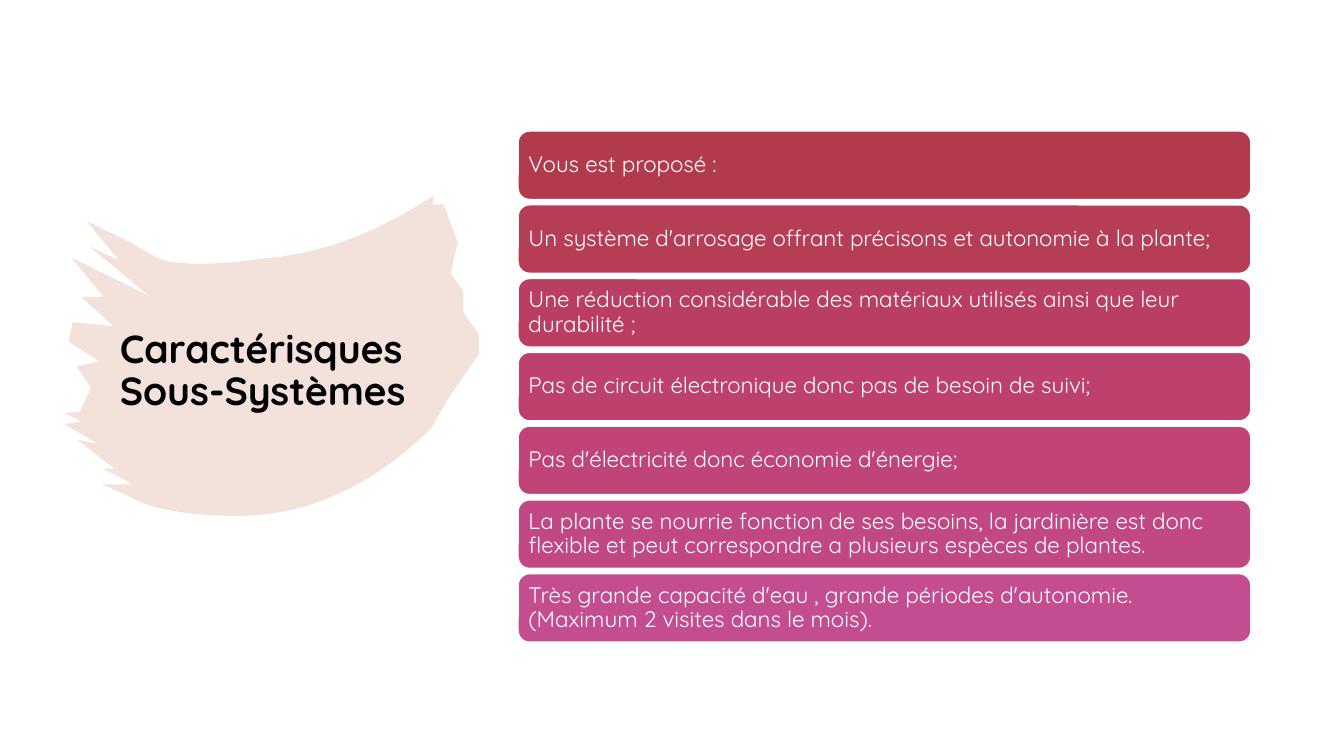
import pptx
import pptx.util
import pptx.dml.color
import pptx.enum.shapes
import pptx.enum.text
from dataclasses import dataclass
from lxml import etree

Pt = pptx.util.Pt


@dataclass(frozen=True)
class Theme:
    font: str = "Quicksand"
    dark: str = "000000"
    light: str = "FFFFFF"
    brush: str = "C36D4D"
    bars: tuple = ("B13B4C", "B53D56", "BA3E61", "BE406C",
                   "C04478", "C24884", "C34D8F")
    head: float = 28
    body: float = 16


THEME = Theme()

LINES = (
    "Vous est proposé :",
    "Un système d'arrosage offrant précisons et autonomie à la plante;",
    "Une réduction considérable des matériaux utilisés ainsi que leur durabilité ;",
    "Pas de circuit électronique donc pas de besoin de suivi;",
    "Pas d'électricité donc économie d'énergie;",
    "La plante se nourrie fonction de ses besoins, la jardinière est donc "
    "flexible et peut correspondre a plusieurs espèces de plantes.",
    "Très grande capacité d'eau , grande périodes d'autonomie.\v"
    "(Maximum 2 visites dans le mois).",
)

# Brush outline in points: pairs are corners, sixes are Bézier curves
EDGE = (
    # right side, downward
    (310, 140), (309, 146), (317, 146), (327, 173), (322, 195),
    (326, 201), (331, 208), (331, 223), (342, 239), (342, 253),
    (320, 285), (308, 306),
    # lower sweep
    (307, 306, 257, 363, 184, 368), (150, 370, 110, 366, 91, 354),
    # bristles, upward
    (73, 346), (95, 346), (74, 335), (82, 335), (55, 314), (70, 317),
    (46, 303), (58, 301), (46, 295), (57, 294), (65, 277), (55, 262),
    (71, 258), (49, 244), (52, 230), (81, 233), (58, 212), (74, 212),
    (51, 184), (106, 211), (64, 176), (85, 186), (62, 158), (91, 172),
    # upper sweep
    (112, 184), (119, 188, 145, 191, 185, 185),
    (239, 181, 274, 160, 288, 153),
)


def tint(code):
    return pptx.dml.color.RGBColor.from_string(code)


def write(shape, text, size, color, bold=False, inset=7.2):
    """Put left-aligned, middle-anchored text in a shape."""
    frame = shape.text_frame
    frame.word_wrap = True
    frame.vertical_anchor = pptx.enum.text.MSO_ANCHOR.MIDDLE
    frame.margin_left = frame.margin_right = Pt(inset)
    frame.margin_top = frame.margin_bottom = Pt(min(inset, 5))
    para = frame.paragraphs[0]
    para.text = text
    para.alignment = pptx.enum.text.PP_ALIGN.LEFT
    para.line_spacing = 0.9
    for run in para.runs:
        run.font.name = THEME.font
        run.font.size = Pt(size)
        run.font.bold = bold
        run.font.color.rgb = tint(color)


def trace(edge, steps=12):
    """Turn corners and Bézier curves into a list of points."""
    spots = [edge[0]]
    for part in edge[1:]:
        if len(part) == 2:
            spots.append(part)
            continue
        ends = (spots[-1], part[:2], part[2:4], part[4:])
        for step in range(1, steps + 1):
            t = step / steps
            mix = ((1 - t) ** 3, 3 * t * (1 - t) ** 2,
                   3 * t * t * (1 - t), t ** 3)
            spots.append(tuple(sum(m * e[axis] for m, e in zip(mix, ends))
                               for axis in (0, 1)))
    return [(Pt(x), Pt(y)) for x, y in spots]


def add_brush(slide):
    spots = trace(EDGE)
    pen = slide.shapes.build_freeform(*spots[0])
    pen.add_line_segments(spots[1:], close=True)
    brush = pen.convert_to_shape()
    brush.shadow.inherit = False
    brush.line.fill.background()
    brush.fill.solid()
    brush.fill.fore_color.rgb = tint(THEME.brush)
    # 20 % opacity
    space = "{http://schemas.openxmlformats.org/drawingml/2006/main}"
    fill = brush.element.spPr.find(f"{space}solidFill/{space}srgbClr")
    etree.SubElement(fill, f"{space}alpha").set("val", "20000")


def add_title(slide, text):
    box = slide.shapes.add_textbox(Pt(78.5), Pt(206.6), Pt(236.9), Pt(118.1))
    write(box, text, THEME.head, THEME.dark, bold=True)


def add_bar(slide, top, text, color):
    bar = slide.shapes.add_shape(
        pptx.enum.shapes.MSO_SHAPE.ROUNDED_RECTANGLE,
        Pt(370.1), Pt(top), Pt(523.4), Pt(48.9))
    bar.shadow.inherit = False
    bar.fill.solid()
    bar.fill.fore_color.rgb = tint(color)
    bar.line.color.rgb = tint(THEME.light)
    bar.line.width = Pt(1)
    write(bar, text, THEME.body, THEME.light, inset=5)


def main():
    deck = pptx.Presentation()
    deck.slide_width, deck.slide_height = Pt(960), Pt(540)
    slide = deck.slides.add_slide(deck.slide_layouts[6])

    # Title on its brush stroke
    add_brush(slide)
    add_title(slide, "Caractérisques Sous-Systèmes")

    # Stack of bars, evenly spaced
    for row, (text, color) in enumerate(zip(LINES, THEME.bars)):
        add_bar(slide, 93.6 + 52.7 * row, text, color)

    deck.save("out.pptx")


if __name__ == "__main__":
    main()
